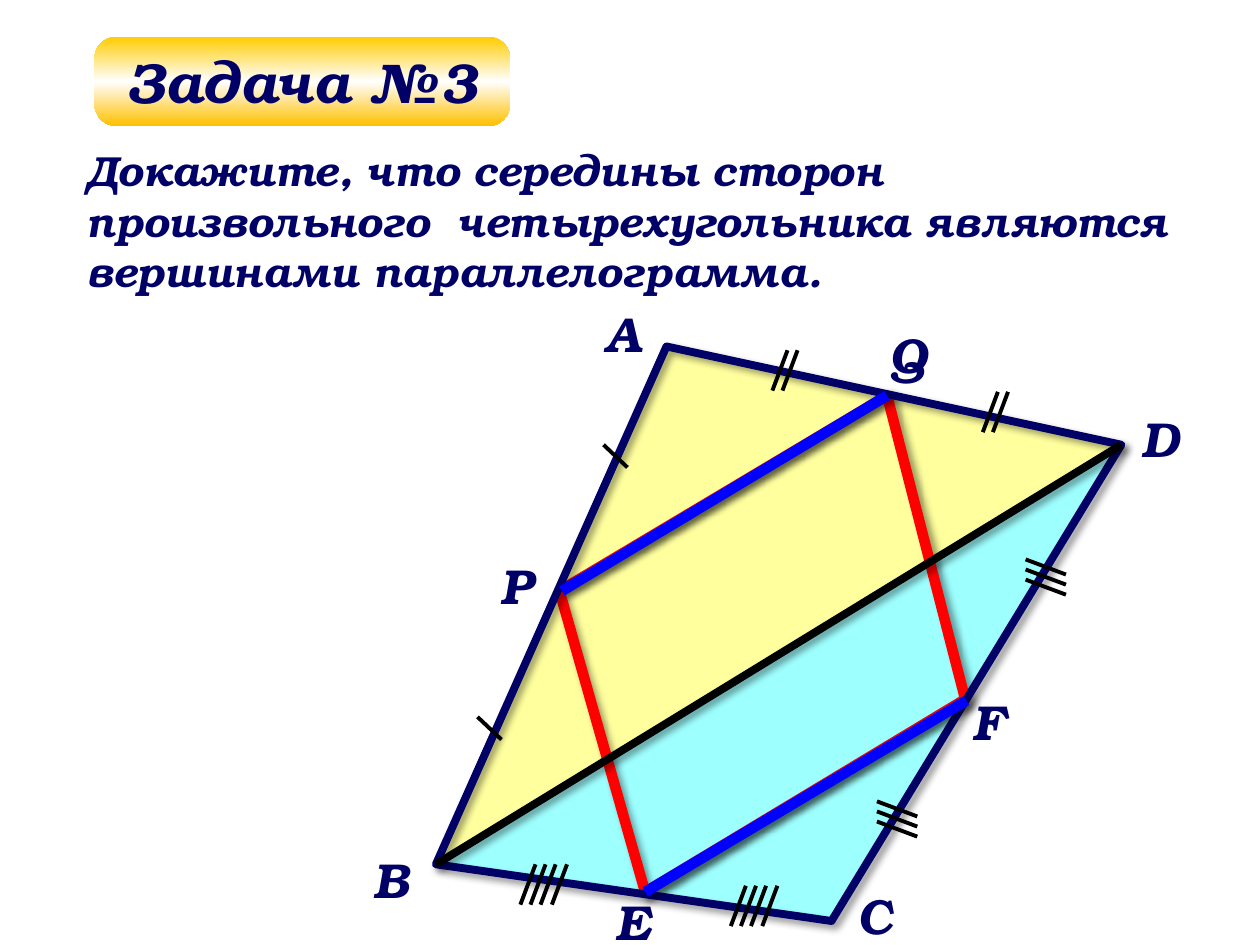
from dataclasses import dataclass

from lxml import etree
from pptx import Presentation
from pptx.dml import color
from pptx.enum import shapes, text
from pptx.oxml import ns, parse_xml
from pptx import util as u

PX = 9144  # EMU in one px, 100 px to the inch


@dataclass(frozen=True)
class Theme:
    font: str = "TeX Gyre Bonum"
    ink: str = "000066"
    black: str = "000000"
    red: str = "FF0000"
    blue: str = "0000FF"
    yellow: str = "FFFF00"
    cyan: str = "00FFFF"
    title_gradient: tuple = ((0, "FFCC00"), (50, "FFFFFF"), (100, "FFC000"))
    title_size: int = 32
    task_size: int = 24
    label_size: int = 28


THEME = Theme()


def px(*lengths):
    return [u.Emu(length * PX) for length in lengths]


def rgb(value):
    return color.RGBColor.from_string(value)


def write_text(shape, words, size, wrap=False, align=text.PP_ALIGN.LEFT,
               anchor=text.MSO_ANCHOR.TOP):
    frame = shape.text_frame
    frame.word_wrap = wrap
    frame.vertical_anchor = anchor
    paragraph = frame.paragraphs[0]
    paragraph.alignment = align
    run = paragraph.add_run()
    run.text = words
    run.font.name = THEME.font
    run.font.size = u.Pt(size)
    run.font.bold = run.font.italic = True
    run.font.color.rgb = rgb(THEME.ink)


def add_text(slide, box, words, size, **options):
    write_text(slide.shapes.add_textbox(*px(*box)), words, size, **options)


def style_line(shape, line_color, width, shadow=False):
    """Set the stroke, and either a soft shadow or none."""
    shape.line.color.rgb = rgb(line_color)
    shape.line.width = u.Pt(width)
    properties = shape._element.spPr
    effects = properties.find(ns.qn("a:effectLst"))
    if effects is None:
        effects = etree.SubElement(properties, ns.qn("a:effectLst"))
    if shadow:
        effects.append(parse_xml(
            f'<a:outerShdw {ns.nsdecls("a")} blurRad="{u.Pt(4)}" dist="{u.Pt(3)}" '
            'dir="2700000" algn="tl" rotWithShape="0"><a:srgbClr val="000000">'
            '<a:alpha val="40000"/></a:srgbClr></a:outerShdw>'))


def add_segment(slide, start, end, line_color, width, shadow=False):
    line = slide.shapes.add_connector(
        shapes.MSO_CONNECTOR.STRAIGHT, *px(*start, *end))
    style_line(line, line_color, width, shadow)


def add_polygon(slide, points, line_color, width, fill=None, shadow=False):
    corners = [tuple(px(*point)) for point in points]
    builder = slide.shapes.build_freeform(*corners[0])
    builder.add_line_segments(corners[1:], close=True)
    polygon = builder.convert_to_shape()
    polygon.shadow.inherit = False
    if fill:
        polygon.fill.solid()
        polygon.fill.fore_color.rgb = rgb(fill)
        fill_color = polygon._element.spPr.find(".//" + ns.qn("a:srgbClr"))
        etree.SubElement(fill_color, ns.qn("a:alpha")).set("val", "38000")
    else:
        polygon.fill.background()
    style_line(polygon, line_color, width, shadow)


def add_title(slide, box):
    badge = slide.shapes.add_shape(
        shapes.MSO_SHAPE.ROUNDED_RECTANGLE, *px(*box))
    badge.adjustments[0] = 0.25
    badge.shadow.inherit = False
    badge.line.fill.background()
    badge.fill.gradient()
    badge.fill.gradient_angle = 270
    stops = badge._element.spPr.find(".//" + ns.qn("a:gsLst"))
    for stop in list(stops):
        stops.remove(stop)
    for position, value in THEME.title_gradient:
        stops.append(parse_xml(
            f'<a:gs {ns.nsdecls("a")} pos="{position * 1000}">'
            f'<a:srgbClr val="{value}"/></a:gs>'))
    write_text(badge, "Задача №3", THEME.title_size,
               align=text.PP_ALIGN.CENTER, anchor=text.MSO_ANCHOR.MIDDLE)


def add_task(slide, box):
    add_text(slide, box,
             "Докажите, что середины сторон произвольного  четырехугольника "
             "являются вершинами параллелограмма.", THEME.task_size, wrap=True)


def add_diagram(slide, box):
    left, top = box[:2]

    def at(x, y):
        return left + x, top + y

    # Vertices and midpoints of the sides
    a, b, c, d = at(242, 39), at(59, 450), at(373, 495), at(603, 117)
    p, q, f, e = at(157, 233), at(417, 78), at(479, 319), at(225, 472)

    # The two triangles, the parallelogram and the quadrilateral
    add_polygon(slide, (d, b, c), THEME.black, 0.75, fill=THEME.cyan)
    add_polygon(slide, (b, d, a), THEME.black, 0.75, fill=THEME.yellow)
    add_polygon(slide, (f, e, p, q), THEME.red, 6, shadow=True)
    add_polygon(slide, (b, a, d, c), THEME.ink, 4.5, shadow=True)

    # Diagonal and the two midlines parallel to it
    add_segment(slide, b, d, THEME.black, 4.5, shadow=True)
    add_segment(slide, q, at(159, 233), THEME.blue, 6, shadow=True)
    add_segment(slide, at(480, 320), e, THEME.blue, 6, shadow=True)

    # Equal-length marks: starts on both halves, stroke, direction, count
    marks = (
        (((192, 117), (92, 333)), (19, 18), (0, 0), 1),
        (((338, 42), (505, 75)), (-12, 32), (1, 0), 2),
        (((527, 208), (409, 400)), (32, 12), (0, 1), 3),
        (((138, 450), (305, 467)), (-12, 32), (1, 0), 4),
    )
    for starts, (dx, dy), (step_x, step_y), count in marks:
        for x, y in starts:
            for index in range(count):
                gap = index * 25 // 3
                tick_x, tick_y = at(x + step_x * gap, y + step_y * gap)
                add_segment(slide, (tick_x, tick_y), (tick_x + dx, tick_y + dy),
                            THEME.black, 2.25)

    # Point names
    labels = (("А", 184, 0, 67), ("В", 0, 433, 50), ("С", 384, 462, 49),
              ("D", 609, 83, 51), ("Р", 100, 200, 45), ("Q", 409, 17, 50),
              ("F", 475, 308, 47), ("E", 192, 467, 49))
    for name, x, y, width in labels:
        add_text(slide, (*at(x, y), width, 57), name, THEME.label_size)


def main():
    presentation = Presentation()
    presentation.slide_width, presentation.slide_height = px(1000, 750)
    slide = presentation.slides.add_slide(presentation.slide_layouts[6])
    add_diagram(slide, (287, 236, 660, 514))
    add_title(slide, (75, 29, 330, 71))
    add_task(slide, (59, 110, 888, 131))
    presentation.save("out.pptx")


if __name__ == "__main__":
    main()
